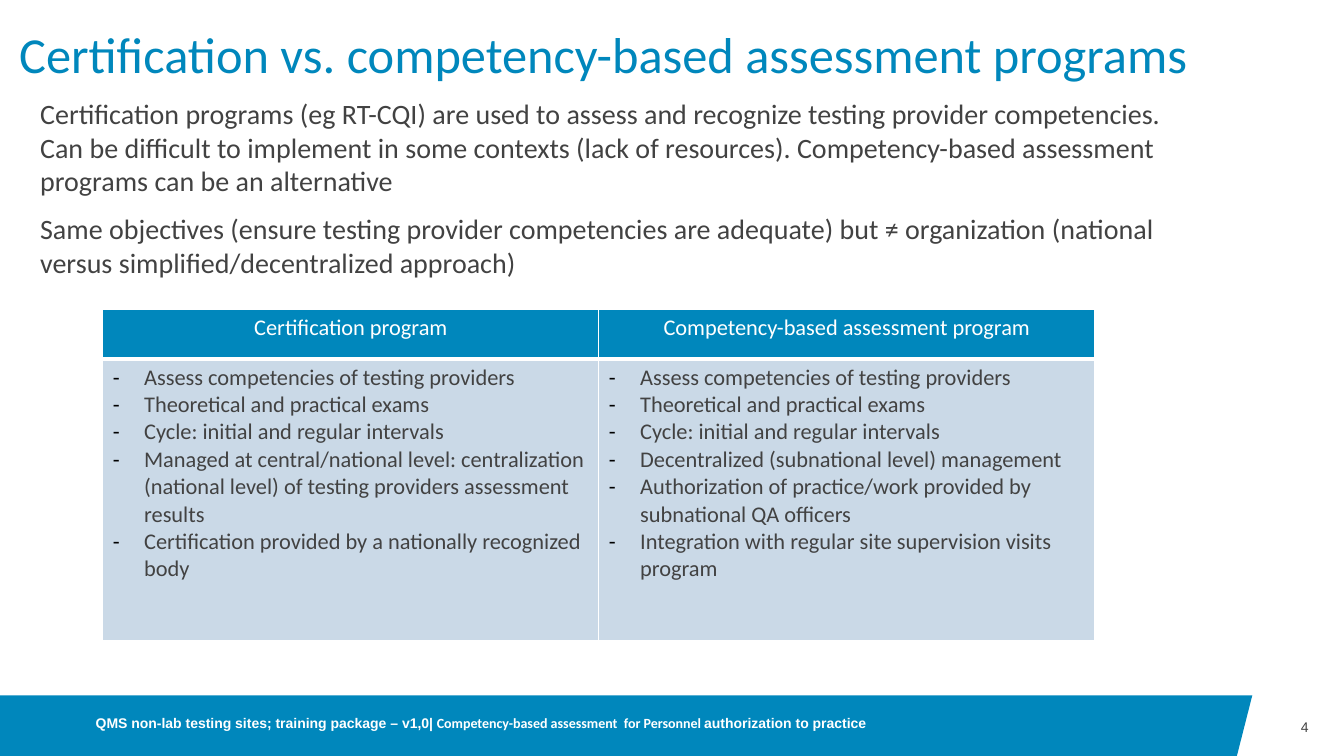
from pptx import Presentation
from pptx import util as u
from pptx.dml import color
from pptx.enum import text
from pptx.oxml import parse_xml
from pptx.oxml import ns

BLUE, GREY, PALE, WHITE = "0087BC", "424242", "CAD9E7", "FFFFFF"
HEAD = "Certification vs. competency-based assessment programs"
BODY = [
    "Certification programs (eg RT-CQI) are used to assess and recognize testing provider competencies. Can be difficult to implement in some contexts (lack of resources). Competency-based assessment programs can be an alternative",
    "Same objectives (ensure testing provider competencies are adequate) but ≠ organization (national versus simplified/decentralized approach)",
]
SHARED = [
    "Assess competencies of testing providers",
    "Theoretical and practical exams",
    "Cycle: initial and regular intervals",
]
TABLE = {
    "Certification program": SHARED + [
        "Managed at central/national level: centralization (national level) of testing providers assessment results",
        "Certification provided by a nationally recognized body",
    ],
    "Competency-based assessment program": SHARED + [
        "Decentralized (subnational level) management",
        "Authorization of practice/work provided by subnational QA officers",
        "Integration with regular site supervision visits program",
    ],
}
FOOT = [
    ("QMS non-lab testing sites; training package – v1,0| ", "Arial"),
    ("Competency-based assessment\u00a0 for Personnel ", "Calibri"),
    ("authorization to practice", "Arial"),
]
BAND = [(0, 6.9), (12.42, 6.9), (12.26, 7.53), (0, 7.53)]
ROWS = [0.49, 2.8]
WIDTH = 4.92
MID = text.MSO_ANCHOR.MIDDLE
LEFT, CENTER, RIGHT = text.PP_ALIGN.LEFT, text.PP_ALIGN.CENTER, text.PP_ALIGN.RIGHT


def rgb(tone):
    return color.RGBColor.from_string(tone)


def paint(item, tone):
    item.fill.solid()
    item.fill.fore_color.rgb = rgb(tone)


def place(shape, box):
    for name, size in zip(("left", "top", "width", "height"), box):
        setattr(shape, name, u.Inches(size))


def add_run(para, words, size, tone, font="Calibri", bold=False):
    run = para.add_run()
    run.text = words
    for name, value in {"name": font, "size": u.Pt(size), "bold": bold}.items():
        setattr(run.font, name, value)
    run.font.color.rgb = rgb(tone)


def set_frame(frame, side=0, edge=0, anchor=MID):
    form = {
        "word_wrap": True, "auto_size": text.MSO_AUTO_SIZE.NONE,
        "vertical_anchor": anchor,
        "margin_left": u.Inches(side), "margin_right": u.Inches(side),
        "margin_top": u.Inches(edge), "margin_bottom": u.Inches(edge),
    }
    for name, value in form.items():
        setattr(frame, name, value)


def add_box(slide, box, **form):
    shape = slide.shapes.add_textbox(*map(u.Inches, box))
    set_frame(shape.text_frame, **form)
    return shape.text_frame


def add_paras(frame, lines):
    for num, line in enumerate(lines):
        yield frame.add_paragraph() if num else frame.paragraphs[0], line


def indent(para, left, first=0):
    props = para._p.get_or_add_pPr()
    props.set("marL", str(u.Inches(left)))
    props.set("indent", str(u.Inches(first)))
    return props


def add_dash(para):
    props = indent(para, 0.31, -0.31)
    space = ns.nsdecls("a")
    for part in (
        f'<a:buClr {space}><a:srgbClr val="000000"/></a:buClr>',
        f'<a:buFont {space} typeface="Calibri"/>',
        f'<a:buChar {space} char="-"/>',
    ):
        props.append(parse_xml(part))


def add_edges(cell, **widths):
    props = cell._tc.get_or_add_tcPr()
    for num, side in enumerate("LRTB"):
        wide = u.Pt(widths.get(side, 1))
        props.insert(num, parse_xml(
            f'<a:ln{side} {ns.nsdecls("a")} w="{wide}"><a:solidFill>'
            f'<a:srgbClr val="{WHITE}"/></a:solidFill></a:ln{side}>'))


def add_table(slide):
    box = map(u.Inches, (1.02, 3.07, WIDTH * len(TABLE), sum(ROWS)))
    grid = slide.shapes.add_table(len(ROWS), len(TABLE), *box).table
    for row, high in zip(grid.rows, ROWS):
        row.height = u.Inches(high)
    for col, (name, items) in enumerate(TABLE.items()):
        grid.columns[col].width = u.Inches(WIDTH)
        top, low = grid.cell(0, col), grid.cell(1, col)
        paint(top, BLUE)
        paint(low, PALE)
        add_edges(top, B=3)
        add_edges(low, T=3)
        para = top.text_frame.paragraphs[0]
        para.alignment = CENTER
        add_run(para, name, 16, WHITE)
        for para, item in add_paras(low.text_frame, items):
            add_dash(para)
            add_run(para, item, 16, GREY)


def main():
    deck = Presentation()
    deck.slide_width, deck.slide_height = u.Inches(13.33), u.Inches(7.5)
    slide = deck.slides.add_slide(deck.slide_layouts[5])

    pen = slide.shapes.build_freeform(*map(u.Inches, BAND[0]))
    pen.add_line_segments([tuple(map(u.Inches, spot)) for spot in BAND[1:]])
    band = pen.convert_to_shape()
    band.shadow.inherit = False
    paint(band, BLUE)
    band.line.fill.background()

    title = slide.shapes.title
    place(title, (0.19, 0.05, 12.95, 1.03))
    set_frame(title.text_frame)
    para = title.text_frame.paragraphs[0]
    para.alignment, para.line_spacing = LEFT, 0.9
    add_run(para, HEAD, 36, BLUE)

    frame = add_box(slide, (0.19, 0.91, 11.5, 2.1), side=0.1, edge=0.05,
                    anchor=text.MSO_ANCHOR.TOP)
    for para, line in add_paras(frame, BODY):
        indent(para, 0.11)
        para.space_before = u.Pt(10)
        add_run(para, line, 20, GREY)

    add_table(slide)

    para = add_box(slide, (0.95, 6.9, 8, 0.55)).paragraphs[0]
    for words, font in FOOT:
        add_run(para, words, 10, WHITE, font, True)

    para = add_box(slide, (12.42, 6.9, 0.56, 0.63)).paragraphs[0]
    para.alignment = RIGHT
    add_run(para, "4", 10, GREY, "Arial")

    deck.save("out.pptx")


if __name__ == "__main__":
    main()
